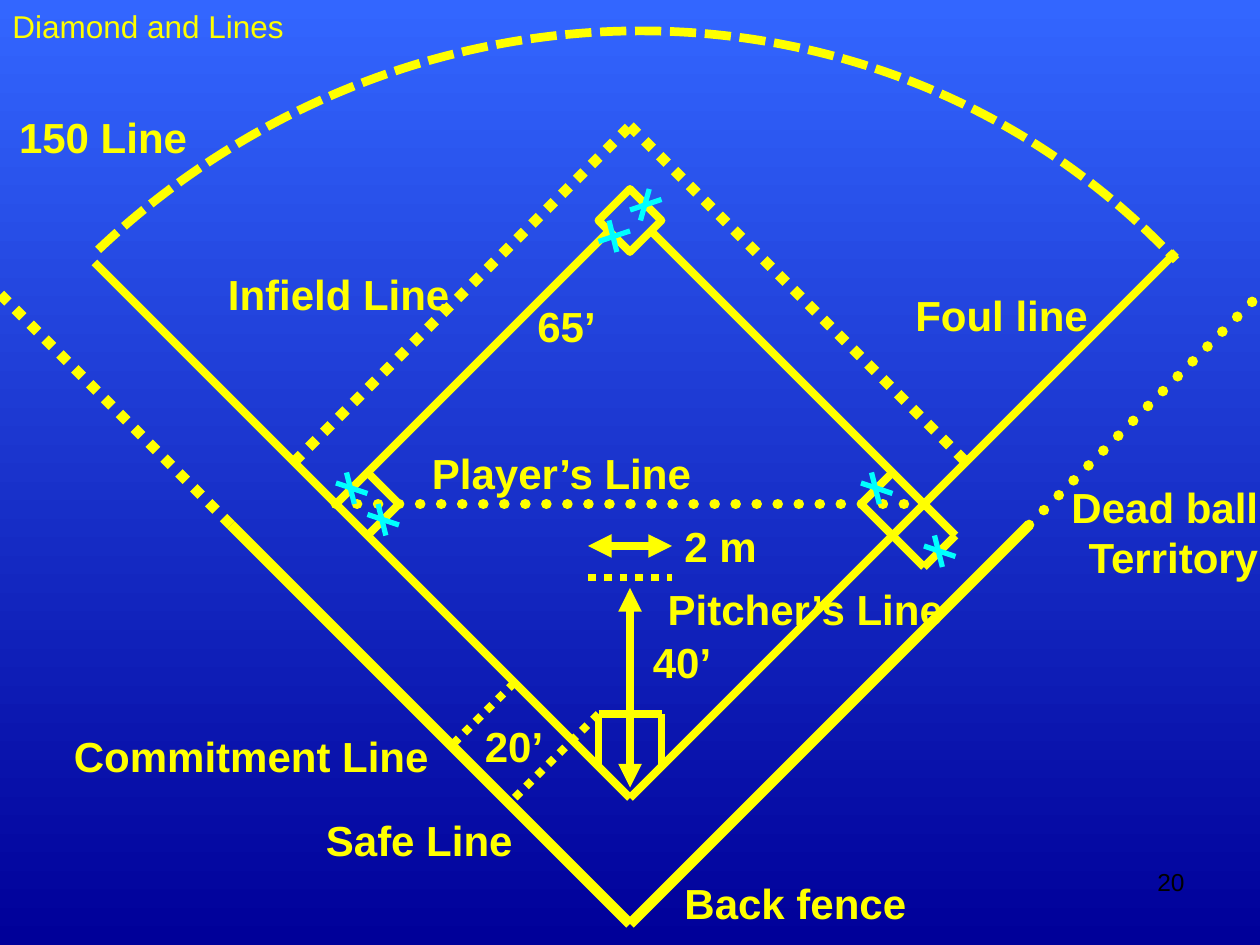
"""Build a slide of a kickball field: base paths, marked lines and their labels."""
from typing import NamedTuple, Optional

from lxml.etree import SubElement
from pptx import Presentation
from pptx.dml.color import RGBColor
from pptx.enum.dml import MSO_LINE
from pptx.enum.shapes import MSO_CONNECTOR, MSO_SHAPE
from pptx.enum.text import MSO_ANCHOR, MSO_AUTO_SIZE, PP_ALIGN
from pptx.oxml.ns import qn
from pptx.shapes.autoshape import Shape
from pptx.slide import Slide
from pptx.util import Pt

YELLOW = RGBColor(0xFF, 0xFF, 0x00)
CYAN = RGBColor(0x00, 0xFF, 0xFF)
BLACK = RGBColor(0x00, 0x00, 0x00)
SKY = RGBColor(0x33, 0x66, 0xFF)
NAVY = RGBColor(0x00, 0x00, 0x99)
DOT = MSO_LINE.ROUND_DOT
LEFT, RIGHT = PP_ALIGN.LEFT, PP_ALIGN.RIGHT


class Line(NamedTuple):
    x1: float
    y1: float
    x2: float
    y2: float
    width: float = 4.5
    dash: Optional[MSO_LINE] = None
    color: RGBColor = YELLOW
    round_cap: bool = False
    arrows: bool = False


class Mark(NamedTuple):
    x: float
    y: float
    top: float = 6
    bottom: float = 10.5
    left: float = 6
    right: float = 12


class Label(NamedTuple):
    text: str
    x: float
    y: float
    w: float
    align: PP_ALIGN = LEFT
    h: float = 36


LINES = [
    Line(360, 528, 132, 300, 6),
    Line(360, 528, 588, 300, 6),
    Line(360, 456, 672, 144),
    Line(360, 456, 54, 150),
    Line(192, 288, 348, 132),
    Line(528, 288, 372, 132),
    Line(168, 264, 360, 72, 6, DOT),
    Line(360, 72, 552, 264, 6, DOT),
    Line(192, 288, 528, 288, 6, DOT, round_cap=True),
    Line(342, 438, 342, 408),
    Line(378, 438, 378, 408),
    Line(342, 408, 378, 408),
    Line(210, 270, 228, 288),
    Line(228, 288, 210, 306),
    Line(492, 288, 510, 270),
    Line(492, 288, 528, 324),
    Line(528, 324, 546, 306),
    Line(528, 288, 546, 306),
    Line(342, 408, 294, 456, dash=DOT),
    Line(294, 390, 258, 426, dash=DOT),
    Line(132, 300, 0, 168, 6, DOT),
    Line(588, 300, 720, 168, 6, DOT, round_cap=True),
    Line(336, 330, 384, 330, dash=DOT),
    Line(336, 312, 384, 312, arrows=True),
    Line(360, 336, 360, 450, arrows=True),
]

MARKS = [
    Mark(210, 288),
    Mark(192, 270),
    Mark(528, 306),
    Mark(492, 270),
    Mark(360, 108, top=11, bottom=6, left=12, right=6),
    Mark(342, 126, left=12, right=6),
]

LABELS = [
    Label("65’", 300, 168, 60),
    Label("Foul line", 516, 162, 114),
    Label("Dead ball Territory", 594, 271.5, 132, RIGHT, 65),
    Label("Commitment Line", 6, 414, 246, RIGHT),
    Label("Safe Line", 174, 462, 126, RIGHT),
    Label("Infield Line", 90, 150, 174, RIGHT),
    Label("Player’s Line", 228, 252, 174, RIGHT),
    Label("Pitcher’s Line", 372, 330, 174, RIGHT),
    Label("Back fence", 384, 498, 156),
    Label("20’", 270, 408, 60),
    Label("40’", 366, 360, 60),
    Label("2 m", 384, 294, 60),
    Label("150 Line", 0, 60, 114, RIGHT),
]


def add_line(s: Slide, line: Line) -> None:
    """Draw one straight line, dotted or arrowed as described."""
    c = s.shapes.add_connector(
        MSO_CONNECTOR.STRAIGHT, Pt(line.x1), Pt(line.y1), Pt(line.x2), Pt(line.y2))
    c.line.width = Pt(line.width)
    c.line.color.rgb = line.color
    if line.dash is not None:
        c.line.dash_style = line.dash
    ln = c.line._get_or_add_ln()
    if line.round_cap:
        ln.set("cap", "rnd")
    if line.arrows:
        for end in ("a:headEnd", "a:tailEnd"):
            SubElement(ln, qn(end), type="triangle")
    SubElement(c._element.spPr, qn("a:effectLst"))


def add_mark(s: Slide, m: Mark) -> None:
    """Draw a player's position as two crossing strokes."""
    add_line(s, Line(m.x + m.top, m.y, m.x + m.bottom, m.y + 18, 3, color=CYAN))
    add_line(s, Line(m.x, m.y + m.left, m.x + 18, m.y + m.right, 3, color=CYAN))


def add_outline(s: Slide, kind: MSO_SHAPE, x: float, y: float, w: float, h: float,
                width: float) -> Shape:
    """Draw an unfilled yellow preset shape."""
    sp = s.shapes.add_shape(kind, Pt(x), Pt(y), Pt(w), Pt(h))
    sp.shadow.inherit = False
    sp.fill.background()
    sp.line.color.rgb = YELLOW
    sp.line.width = Pt(width)
    return sp


def add_text(s: Slide, text: str, x: float, y: float, w: float, h: float, *,
             size: float = 24, bold: bool = False, color: RGBColor = YELLOW,
             align: PP_ALIGN = LEFT, anchor: MSO_ANCHOR = MSO_ANCHOR.TOP,
             grow: bool = False) -> None:
    """Place a text box with one formatted paragraph."""
    tf = s.shapes.add_textbox(Pt(x), Pt(y), Pt(w), Pt(h)).text_frame
    tf.word_wrap = True
    tf.vertical_anchor = anchor
    tf.auto_size = MSO_AUTO_SIZE.SHAPE_TO_FIT_TEXT if grow else MSO_AUTO_SIZE.NONE
    p = tf.paragraphs[0]
    p.alignment = align
    r = p.add_run()
    r.text = text
    r.font.name = "Arial"
    r.font.size = Pt(size)
    r.font.bold = bold
    r.font.color.rgb = color


def main() -> None:
    """Build the slide and save it."""
    prs = Presentation()
    prs.slide_width, prs.slide_height = Pt(720), Pt(540)
    s = prs.slides.add_slide(prs.slide_layouts[6])
    fill = s.background.fill
    fill.gradient()
    fill.gradient_angle = 270
    for stop, color in zip(fill.gradient_stops, (SKY, NAVY)):
        stop.color.rgb = color

    for line in LINES:
        add_line(s, line)
    add_outline(s, MSO_SHAPE.DIAMOND, 342, 108, 36, 36, 4.5)
    for mark in MARKS:
        add_mark(s, mark)
    arc = add_outline(s, MSO_SHAPE.ARC, -93.6, 25.9, 885.6, 851.8, 5)
    arc.rotation = 316
    arc.adjustments[0], arc.adjustments[1] = 162.31, 0.49
    arc.line.dash_style = MSO_LINE.SQUARE_DOT

    for lb in LABELS:
        add_text(s, lb.text, lb.x, lb.y, lb.w, lb.h, bold=True, align=lb.align, grow=True)
    add_text(s, "20", 516, 492, 168, 37.5, size=14, color=BLACK, align=RIGHT)
    add_text(s, "Diamond and Lines", 0, 0, 177, 30, size=18, anchor=MSO_ANCHOR.MIDDLE)
    prs.save("out.pptx")


if __name__ == "__main__":
    main()
